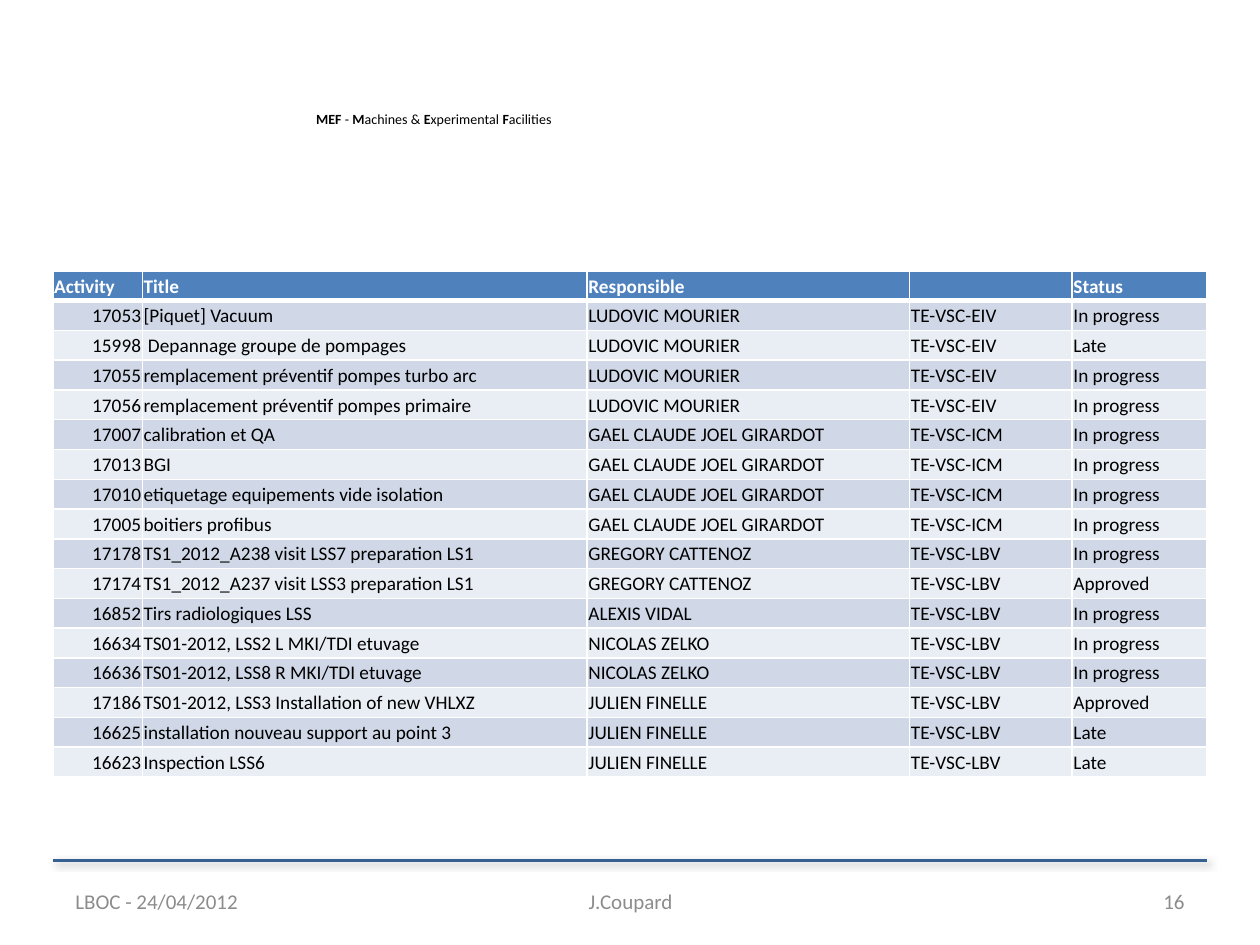
from lxml import etree
from pptx import Presentation
from pptx.dml.color import RGBColor
from pptx.enum import shapes, text
from pptx.oxml import parse_xml
from pptx.oxml.ns import nsdecls, qn
from pptx.util import Inches, Pt

COLORS = {"header": "4F81BD", "odd": "D0D8E8", "even": "E9EDF4", "white": "FFFFFF",
          "black": "000000", "footer": "8C8C8C", "rule": "376092"}
FONT = "Calibri"

BANNER = [("MEF ", True), ("- ", False), ("M", True), ("achines & ", False),
          ("E", True), ("xperimental ", False), ("F", True), ("acilities", False)]

HEADER = ("Activity", "Title", "Responsible", "", "Status")
ACTIVITIES = [
    ("LUDOVIC MOURIER", "TE-VSC-EIV", [
        ("17053", "[Piquet] Vacuum", "In progress"),
        ("15998", " Depannage groupe de pompages", "Late"),
        ("17055", "remplacement préventif pompes turbo arc", "In progress"),
        ("17056", "remplacement préventif pompes primaire", "In progress")]),
    ("GAEL CLAUDE JOEL GIRARDOT", "TE-VSC-ICM", [
        ("17007", "calibration et QA", "In progress"),
        ("17013", "BGI", "In progress"),
        ("17010", "etiquetage equipements vide isolation", "In progress"),
        ("17005", "boitiers profibus", "In progress")]),
    ("GREGORY CATTENOZ", "TE-VSC-LBV", [
        ("17178", "TS1_2012_A238 visit LSS7 preparation LS1", "In progress"),
        ("17174", "TS1_2012_A237 visit LSS3 preparation LS1", "Approved")]),
    ("ALEXIS VIDAL", "TE-VSC-LBV", [
        ("16852", "Tirs radiologiques LSS", "In progress")]),
    ("NICOLAS ZELKO", "TE-VSC-LBV", [
        ("16634", "TS01-2012, LSS2 L MKI/TDI etuvage", "In progress"),
        ("16636", "TS01-2012, LSS8 R MKI/TDI etuvage", "In progress")]),
    ("JULIEN FINELLE", "TE-VSC-LBV", [
        ("17186", "TS01-2012, LSS3 Installation of new VHLXZ", "Approved"),
        ("16625", "installation nouveau support au point 3", "Late"),
        ("16623", "Inspection LSS6", "Late")]),
]
COL_WIDTHS = (0.71, 3.53, 2.56, 1.29, 1.07)
TABLE_LEFT, TABLE_TOP, TABLE_HEIGHT = 0.42, 2.15, 4.02

FOOTERS = [
    ("LBOC - 24/04/2012", 0.5, 2.33, text.PP_ALIGN.LEFT),
    ("J.Coupard", 3.42, 3.17, text.PP_ALIGN.CENTER),
    ("16", 7.17, 2.33, text.PP_ALIGN.RIGHT),
]


def rgb(name):
    return RGBColor.from_string(COLORS[name])


def style(r, size, color, bold=False):
    r.font.name = FONT
    r.font.size = Pt(size)
    r.font.bold = bold
    r.font.color.rgb = rgb(color)


def add_rule(s):
    line = s.shapes.add_connector(shapes.MSO_CONNECTOR.STRAIGHT, Inches(0.42), Inches(6.83),
                                  Inches(9.58), Inches(6.83))
    line.line.color.rgb = rgb("rule")
    line.line.width = Pt(1.5)
    line._element.spPr.append(parse_xml(
        f'<a:effectLst {nsdecls("a")}><a:outerShdw blurRad="{Pt(4)}" dist="{Pt(2)}" '
        f'dir="2700000" algn="tl" rotWithShape="0"><a:srgbClr val="{COLORS["black"]}">'
        '<a:alpha val="40000"/></a:srgbClr></a:outerShdw></a:effectLst>'))


def add_banner(s):
    sp = s.shapes.add_textbox(Inches(2.41), Inches(0.83), Inches(2.09), Inches(0.24))
    tf = sp.text_frame
    tf.word_wrap = False
    tf.auto_size = text.MSO_AUTO_SIZE.SHAPE_TO_FIT_TEXT
    for words, bold in BANNER:
        r = tf.paragraphs[0].add_run()
        r.text = words
        style(r, 8, "black", bold)


def add_footer(s, words, left, width, align):
    sp = s.shapes.add_textbox(Inches(left), Inches(6.95), Inches(width), Inches(0.4))
    tf = sp.text_frame
    tf.word_wrap = True
    tf.vertical_anchor = text.MSO_ANCHOR.MIDDLE
    p = tf.paragraphs[0]
    p.text = words
    p.alignment = align
    style(p.runs[0], 12, "footer")


def set_borders(cell, top, bottom):
    tc_pr = cell._tc.get_or_add_tcPr()
    for i, (side, width) in enumerate((("L", 1), ("R", 1), ("T", top), ("B", bottom))):
        tc_pr.insert(i, parse_xml(
            f'<a:ln{side} {nsdecls("a")} w="{Pt(width)}"><a:solidFill>'
            f'<a:srgbClr val="{COLORS["white"]}"/></a:solidFill></a:ln{side}>'))


def fill_cell(cell, words, row, col):
    is_header = row == 0
    cell.fill.solid()
    cell.fill.fore_color.rgb = rgb("header" if is_header else "odd" if row % 2 else "even")
    cell.margin_left = cell.margin_right = cell.margin_top = Inches(0.01)
    cell.margin_bottom = 0
    cell.vertical_anchor = text.MSO_ANCHOR.MIDDLE
    p = cell.text_frame.paragraphs[0]
    if words:
        p.text = words
        style(p.runs[0], 11, "white" if is_header else "black", is_header)
    else:
        etree.SubElement(p._p, qn("a:endParaRPr"), sz="1100")
    if col == 0 and not is_header:
        p.alignment = text.PP_ALIGN.RIGHT
    set_borders(cell, 3 if row == 1 else 1, 3 if is_header else 1)


def add_activity_table(s):
    rows = [HEADER] + [(number, title, person, unit, status)
                       for person, unit, jobs in ACTIVITIES
                       for number, title, status in jobs]
    table = s.shapes.add_table(len(rows), len(HEADER), Inches(TABLE_LEFT), Inches(TABLE_TOP),
                               Inches(sum(COL_WIDTHS)), Inches(TABLE_HEIGHT)).table
    for column, width in zip(table.columns, COL_WIDTHS):
        column.width = Inches(width)
    for i, row in enumerate(rows):
        table.rows[i].height = Inches(TABLE_HEIGHT / len(rows))
        for j, words in enumerate(row):
            fill_cell(table.cell(i, j), words, i, j)


def main():
    prs = Presentation()
    prs.slide_width, prs.slide_height = Inches(10), Inches(7.5)
    s = prs.slides.add_slide(prs.slide_layouts[6])
    add_rule(s)
    add_banner(s)
    for footer in FOOTERS:
        add_footer(s, *footer)
    add_activity_table(s)
    prs.save("out.pptx")


if __name__ == "__main__":
    main()
